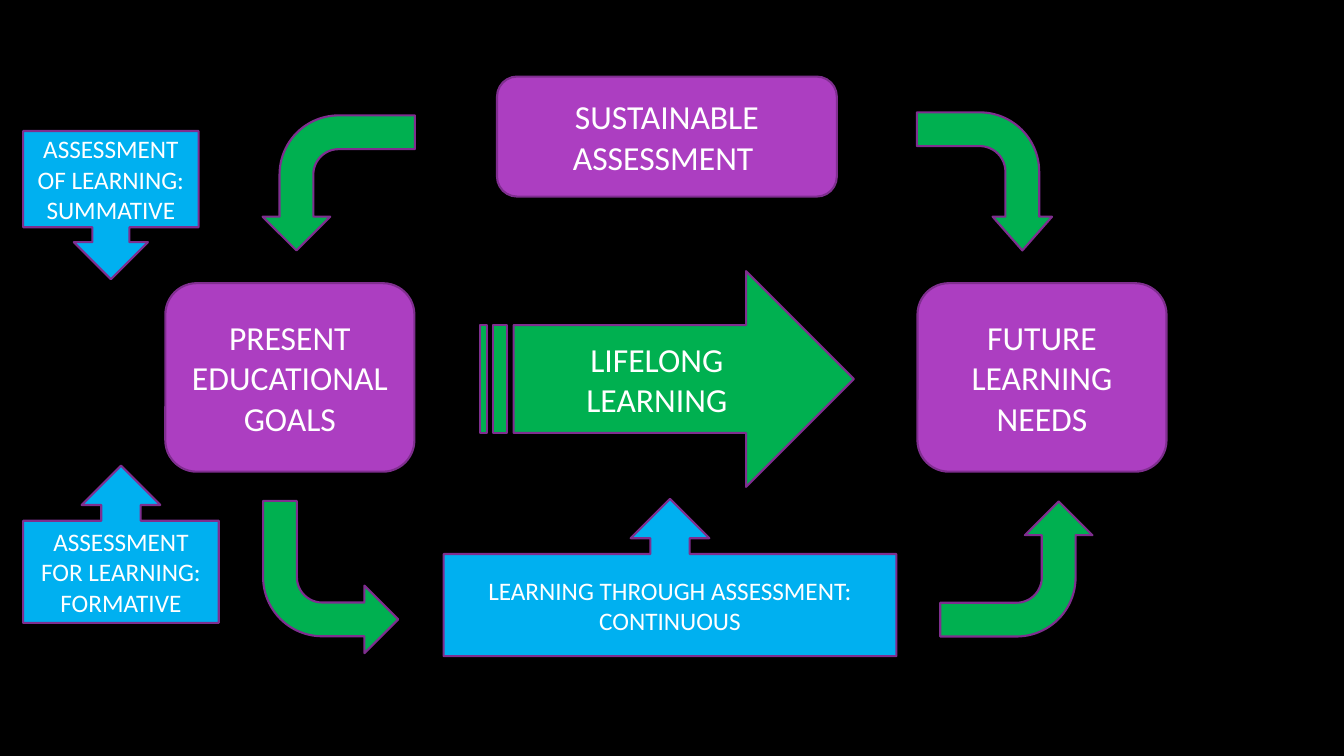
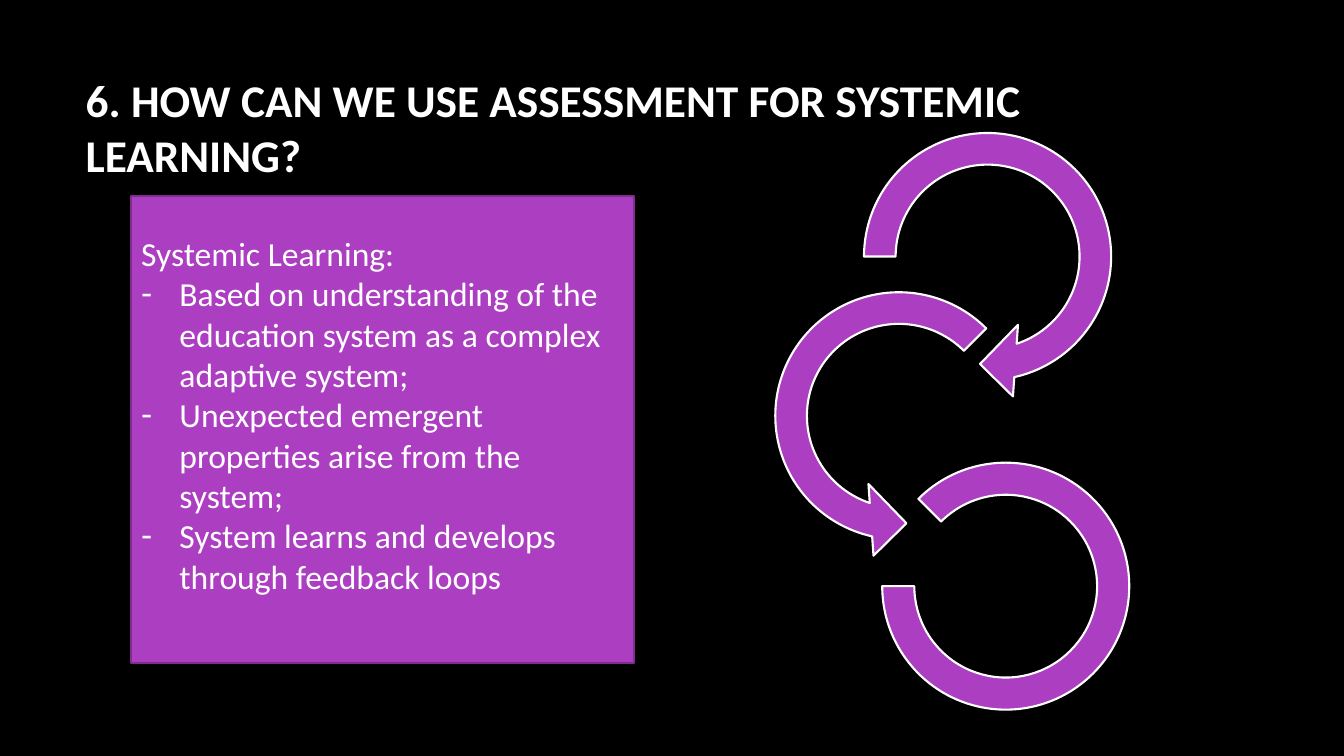
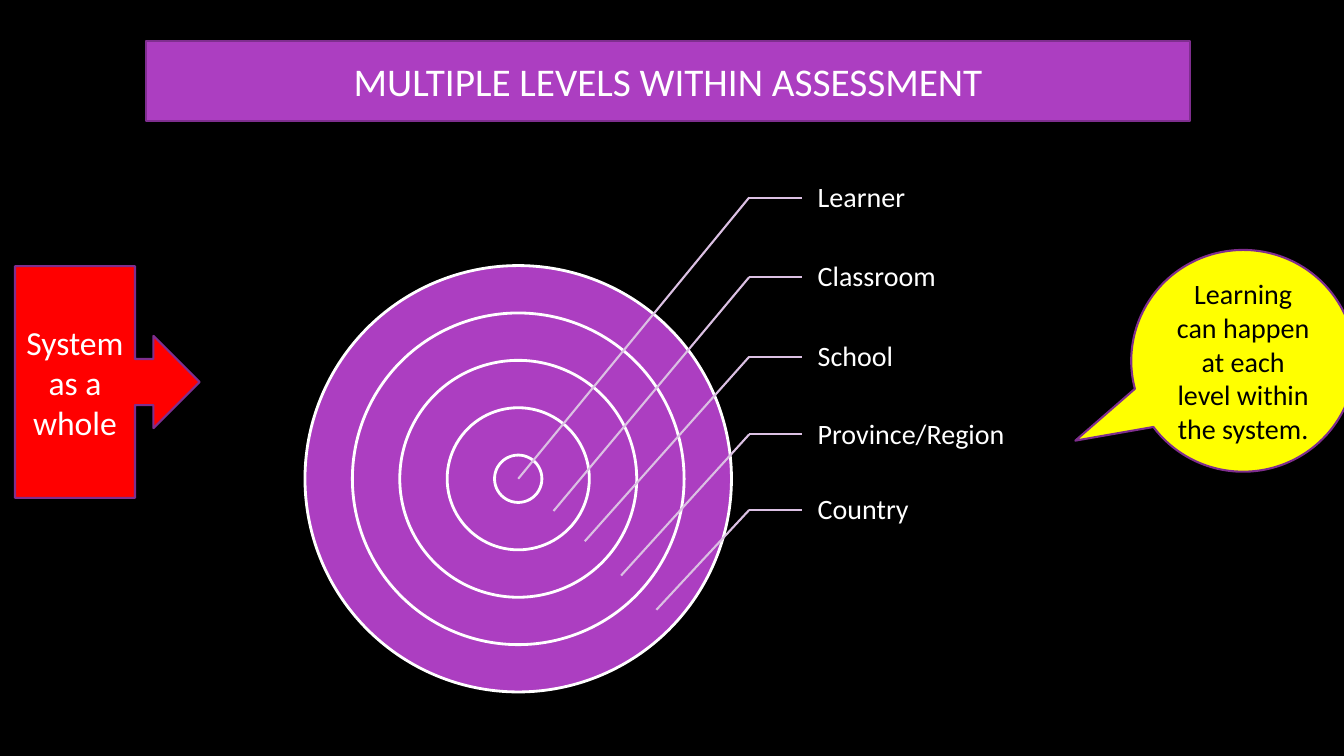
from pptx import Presentation
from pptx import util as u
from pptx.dml import color
from pptx.enum import shapes, text
from pptx.oxml import ns
from lxml import etree

PURPLE, PLUM, LILAC = "AC3EC1", "7F2E8F", "DBC0E3"
GREEN, BLUE, RED, YELLOW = "00B050", "00B0F0", "FF0000", "FFFF00"
WHITE, BLACK = "FFFFFF", "000000"
KIND = shapes.MSO_SHAPE
LEFT, CENTER = text.PP_ALIGN.LEFT, text.PP_ALIGN.CENTER
TOP, MIDDLE = text.MSO_ANCHOR.TOP, text.MSO_ANCHOR.MIDDLE


def rgb(value):
    return color.RGBColor.from_string(value)


def inches(*values):
    return [u.Inches(value) for value in values]


class Deck:
    font = "Calibri"

    def __init__(self):
        self.deck = Presentation()
        self.deck.slide_width, self.deck.slide_height = inches(13.33, 7.5)
        backdrop = self.deck.slide_master.background.fill
        backdrop.solid()
        backdrop.fore_color.rgb = rgb(BLACK)
        self.page = None

    def add_page(self, layout):
        self.page = self.deck.slides.add_slide(self.deck.slide_layouts[layout])

    def paint(self, shape, fill, line=PLUM, width=1.5):
        shape.fill.solid()
        shape.fill.fore_color.rgb = rgb(fill)
        shape.line.color.rgb = rgb(line)
        shape.line.width = u.Pt(width)

    def place(self, shape, at):
        shape.left, shape.top, shape.width, shape.height = inches(*at)

    def frame(self, shape, anchor=MIDDLE, insets=(0.1, 0.05, 0.1, 0.05)):
        frame = shape.text_frame
        frame.word_wrap = True
        frame.auto_size = text.MSO_AUTO_SIZE.NONE
        frame.vertical_anchor = anchor
        (frame.margin_left, frame.margin_top,
         frame.margin_right, frame.margin_bottom) = inches(*insets)
        return frame

    def add_words(self, para, words, size, align=CENTER, ink=WHITE, bold=False):
        para.alignment = align
        span = para.add_run()
        span.text = words
        span.font.name = self.font
        span.font.size = u.Pt(size)
        span.font.bold = bold
        span.font.color.rgb = rgb(ink)

    def shape(self, kind, at, fill, words="", size=24, ink=WHITE, line=PLUM,
              width=1.5, rotation=0, flip="", adjust=()):
        shape = self.page.shapes.add_shape(kind, *inches(*at))
        shape.shadow.inherit = False
        self.paint(shape, fill, line, width)
        shape.rotation = rotation
        for axis in flip:
            shape.element.spPr.xfrm.set("flip" + axis, "1")
        for index, value in enumerate(adjust):
            shape.adjustments[index] = value
        if words:
            self.add_words(self.frame(shape).paragraphs[0], words, size, ink=ink)

    def title(self, words, at, size, align=LEFT, anchor=TOP, fill=None, bold=False):
        box = self.page.shapes.title
        self.place(box, at)
        if fill:
            self.paint(box, fill)
        self.add_words(self.frame(box, anchor).paragraphs[0], words, size, align, bold=bold)

    def bullet(self, para, mark):
        indent = u.Inches(0.38) if mark else 0
        settings = para._p.get_or_add_pPr()
        settings.set("marL", str(indent))
        settings.set("indent", str(-indent))
        if mark:
            etree.SubElement(settings, ns.qn("a:buChar")).set("char", mark)
        else:
            etree.SubElement(settings, ns.qn("a:buNone"))

    def list_panel(self, heading, items, at, size):
        box = self.page.placeholders[1]
        self.place(box, at)
        self.paint(box, PURPLE)
        frame = self.frame(box, insets=(0.1, 0.05, 0.1, 0.35))
        for index, words in enumerate([heading, *items]):
            para = frame.add_paragraph() if index else frame.paragraphs[0]
            self.bullet(para, "-" if index else "")
            para.space_before = u.Pt(0)
            self.add_words(para, words, size, LEFT)

    def label(self, words, at, size):
        box = self.page.shapes.add_textbox(*inches(*at))
        para = self.frame(box, insets=(0.16, 0.03, 0.03, 0.03)).paragraphs[0]
        para.line_spacing = 0.9
        self.add_words(para, words, size, LEFT)

    def line(self, start, end):
        line = self.page.shapes.add_connector(
            shapes.MSO_CONNECTOR.STRAIGHT, *inches(*start, *end))
        line.line.color.rgb = rgb(LILAC)
        line.line.width = u.Pt(1.5)
        etree.SubElement(line._element.spPr, ns.qn("a:effectLst"))


def goals_page(deck):
    deck.add_page(6)
    for words, at in (
        ("PRESENT EDUCATIONAL GOALS", (1.64, 2.81, 2.47, 1.87)),
        ("FUTURE LEARNING NEEDS", (9.1, 2.81, 2.47, 1.87)),
        ("SUSTAINABLE ASSESSMENT ", (4.93, 0.76, 3.37, 1.19)),
    ):
        deck.shape(KIND.ROUNDED_RECTANGLE, at, PURPLE, words)
    for at, rotation, flip, adjust in (
        ((2.69, 1.06, 1.34, 1.51), 90, "V", ()),
        ((9.08, 1.13, 1.37, 1.34), 270, "HV", (0.25, 0.22, 0.25, 0.44)),
        ((2.61, 4.97, 1.34, 1.51), 0, "V", ()),
        ((9.41, 4.89, 1.34, 1.51), 270, "V", ()),
    ):
        deck.shape(KIND.BENT_ARROW, at, GREEN, rotation=rotation, flip=flip, adjust=adjust)
    deck.shape(KIND.STRIPED_RIGHT_ARROW, (4.76, 2.69, 3.71, 2.14), GREEN, "LIFELONG LEARNING")
    for kind, words, at in (
        (KIND.DOWN_ARROW_CALLOUT, "ASSESSMENT OF LEARNING: SUMMATIVE", (0.23, 1.3, 1.74, 1.47)),
        (KIND.UP_ARROW_CALLOUT, "ASSESSMENT FOR LEARNING: FORMATIVE", (0.23, 4.62, 1.94, 1.56)),
        (KIND.UP_ARROW_CALLOUT, "LEARNING THROUGH ASSESSMENT: CONTINUOUS",
         (4.4, 4.95, 4.49, 1.56)),
    ):
        deck.shape(kind, at, BLUE, words, 18)


def systemic_page(deck):
    deck.add_page(1)
    deck.title("6. HOW CAN WE USE ASSESSMENT FOR SYSTEMIC LEARNING?",
               (0.75, 0.67, 11.08, 1.59), 32.4, bold=True)
    deck.list_panel("Systemic Learning:", (
        "Based on understanding of the education system as a complex adaptive system;",
        "Unexpected emergent properties arise from the system;",
        "System learns and develops through feedback loops",
    ), (1.3, 1.94, 4.99, 4.64), 24)
    for kind, at, adjust in (
        (KIND.CIRCULAR_ARROW, (8.37, 1.12, 2.85, 2.85), (0.11, 11.42, 45, 108, 0.125)),
        (KIND.LEFT_CIRCULAR_ARROW, (7.49, 2.7, 2.85, 2.85), (0.11, 11.42, 63, 189, 0.125)),
        (KIND.BLOCK_ARC, (8.75, 4.59, 2.45, 2.45), (135, 108, 0.13)),
    ):
        deck.shape(kind, at, PURPLE, line=WHITE, adjust=adjust)


def levels_page(deck):
    deck.add_page(5)
    deck.title("MULTIPLE LEVELS WITHIN ASSESSMENT", (1.45, 0.41, 10.35, 0.79), 28,
               CENTER, MIDDLE, PURPLE)
    center_x, center_y, ring_step = 5.14, 4.75, 0.47
    for ring in range(9, 0, -2):
        size = ring * ring_step
        deck.shape(KIND.OVAL, (center_x - size / 2, center_y - size / 2, size, size),
                   PURPLE, line=WHITE, width=2)
    elbow, label_left = 7.43, 7.95
    for words, level, target in (
        ("Learner", 1.96, (center_x, center_y)),
        ("Classroom", 2.75, (5.49, 5.07)),
        ("School", 3.54, (5.8, 5.37)),
        ("Province/Region", 4.31, (6.16, 5.71)),
        ("Country", 5.06, (6.51, 6.05)),
    ):
        deck.label(words, (label_left, level - 0.37, 2.11, 0.75), 20)
        deck.line((elbow, level), (label_left, level))
        deck.line((elbow, level), target)
    deck.shape(KIND.LEFT_ARROW_CALLOUT, (0.15, 2.64, 1.83, 2.3), RED,
               "System as a whole", flip="H")
    deck.shape(KIND.OVAL_CALLOUT, (11.22, 2.48, 2.22, 2.2), YELLOW,
               "Learning can happen at each level within the system.", 20, BLACK,
               adjust=(-0.75, 0.36))


def main():
    deck = Deck()
    goals_page(deck)
    systemic_page(deck)
    levels_page(deck)
    deck.deck.save("out.pptx")


if __name__ == "__main__":
    main()
